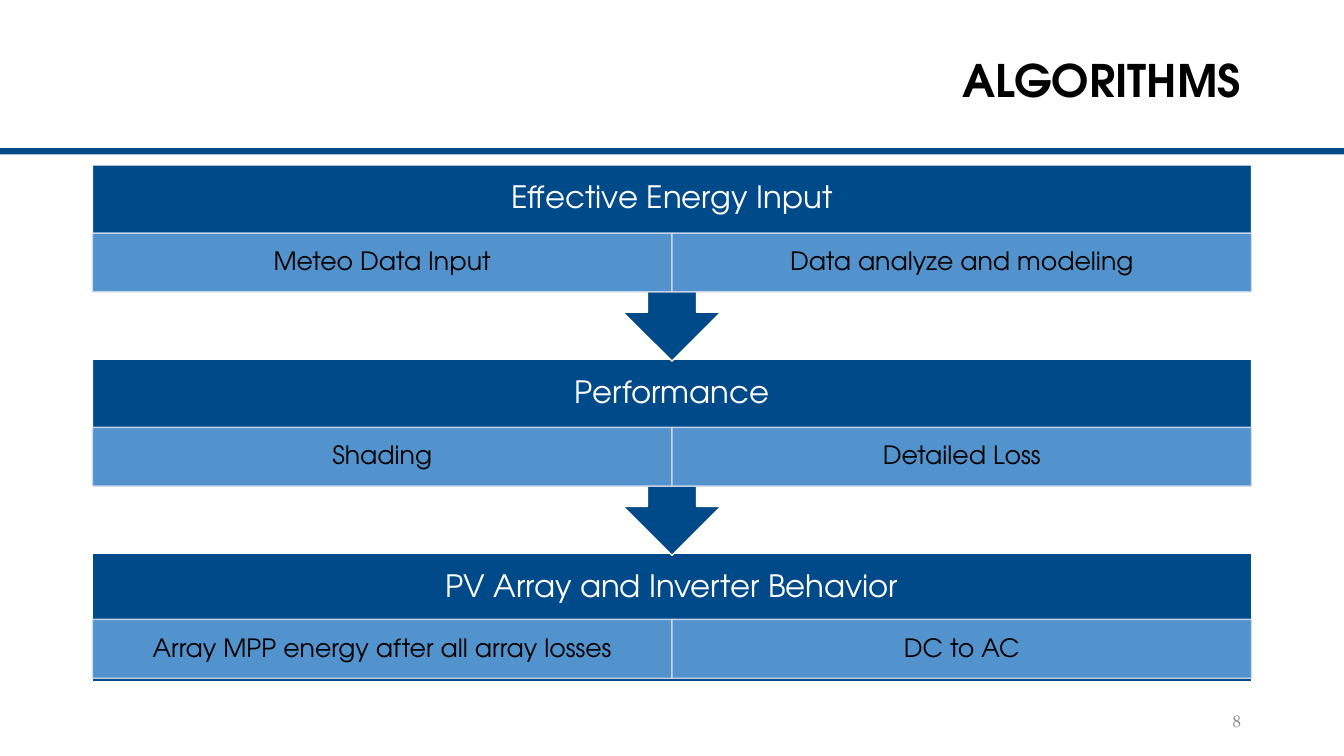
from lxml import etree
from pptx import Presentation
from pptx.dml.color import RGBColor
from pptx.enum.shapes import MSO_SHAPE
from pptx.enum.text import MSO_ANCHOR, PP_ALIGN
from pptx.oxml.ns import qn
from pptx.util import Pt

RECTANGLE = MSO_SHAPE.RECTANGLE
CALLOUT = MSO_SHAPE.UP_ARROW_CALLOUT
MIDDLE = MSO_ANCHOR.MIDDLE
CENTER, RIGHT = PP_ALIGN.CENTER, PP_ALIGN.RIGHT

PX = 9525
TITLE_ONLY = 5
HEADING_FONT, NUMBER_FONT = "TeX Gyre Adventor", "TeX Gyre Pagella"
COLORS = {
    "navy": "004A8A",
    "blue": "5B9BD5",
    "pale": "D2DEEF",
    "white": "FFFFFF",
    "black": "000000",
    "gray": "8C8C8C",
}
FORMATS = {
    "title": {"name": HEADING_FONT, "size": Pt(32), "bold": True},
    "header": {"name": HEADING_FONT, "size": Pt(22)},
    "cell": {"name": HEADING_FONT, "size": Pt(18)},
    "number": {"name": NUMBER_FONT, "size": Pt(12)},
}
STAGES = [
    ("Effective Energy Input", ["Meteo Data Input", "Data analyze and modeling"]),
    ("Performance", ["Shading", "Detailed Loss"]),
    ("PV Array and Inverter Behavior",
     ["Array MPP energy after all array losses", "DC to AC"]),
]
STAGE_PITCH, BOX_HEIGHT, CALLOUT_HEIGHT, CELL_HEIGHT = 185, 122, 187, 56


def rgb(color):
    """Return the named colour."""
    return RGBColor.from_string(COLORS[color])


def scaled(box):
    """Turn a box in px into EMU."""
    return [value * PX for value in box]


def write(shape, text, style, color, alignment, margins=(10, 5), spacing=0.9):
    """Write one formatted paragraph into a shape."""
    frame = shape.text_frame
    side, end = (margin * PX for margin in margins)
    layout = {"word_wrap": True, "vertical_anchor": MIDDLE,
              "margin_left": side, "margin_right": side,
              "margin_top": end, "margin_bottom": end}
    for name, value in layout.items():
        setattr(frame, name, value)
    paragraph = frame.paragraphs[0]
    paragraph.text = text
    paragraph.alignment = alignment
    paragraph.line_spacing = spacing
    for name, value in FORMATS[style].items():
        setattr(paragraph.font, name, value)
    paragraph.font.color.rgb = rgb(color)


def add_block(slide, kind, box, fill, line=None):
    """Add a filled shape with an optional outline."""
    shape = slide.shapes.add_shape(kind, *scaled(box))
    shape.shadow.inherit = False
    shape.fill.solid()
    shape.fill.fore_color.rgb = rgb(fill)
    if line:
        shape.line.color.rgb = rgb(line)
        shape.line.width = Pt(1)
    else:
        shape.line.fill.background()
    return shape


def add_text(slide, box, *content, **options):
    """Add a text box."""
    write(slide.shapes.add_textbox(*scaled(box)), *content, **options)


def add_cell(slide, box, text):
    """Add a slightly transparent cell with its label."""
    cell = add_block(slide, RECTANGLE, box, "blue", "pale")
    for color in cell._element.spPr.iter(qn("a:srgbClr")):
        etree.SubElement(color, qn("a:alpha"), val="90000")
    write(cell, text, "cell", "black", CENTER, margins=(13, 3))


def add_stage(slide, box, header, labels, is_last):
    """Add a header above a row of cells, with an arrow to the next stage."""
    left, top, width, height = box
    if is_last:
        add_block(slide, RECTANGLE, box, "navy", "white")
    else:
        callout_box = left, top, width, CALLOUT_HEIGHT
        callout = add_block(slide, CALLOUT, callout_box, "navy", "white")
        callout.rotation = 180
    header_height = 63 if is_last else 65
    add_text(slide, (left, top, width, 65), header, "header", "white", CENTER,
             margins=(16, 16))
    cell_width = width // len(labels)
    for index, label in enumerate(labels):
        cell_left = left + index * cell_width
        add_cell(slide, (cell_left, top + header_height, cell_width, CELL_HEIGHT), label)


def add_flow(slide, left, top, width):
    """Stack the stages from the last to the first, so arrows lie on top."""
    for index, (header, labels) in reversed(list(enumerate(STAGES))):
        box = left, top + index * STAGE_PITCH, width, BOX_HEIGHT
        add_stage(slide, box, header, labels, index == len(STAGES) - 1)


def add_heading(slide, box, text):
    """Place the title above the full-width rule."""
    title = slide.shapes.title
    title.left, title.top, title.width, title.height = scaled(box)
    write(title, text, "title", "black", RIGHT)
    add_block(slide, RECTANGLE, (0, 141, 1280, 6), "navy")


def main():
    """Build and save the slide."""
    presentation = Presentation()
    presentation.slide_width, presentation.slide_height = scaled((1280, 720))
    slide = presentation.slides.add_slide(presentation.slide_layouts[TITLE_ONLY])
    add_heading(slide, (181, 38, 1011, 83), "ALGORITHMS")
    add_flow(slide, 88, 157, 1104)
    add_text(slide, (904, 667, 288, 38), "8", "number", "gray", RIGHT, spacing=1.0)
    presentation.save("out.pptx")


if __name__ == "__main__":
    main()
